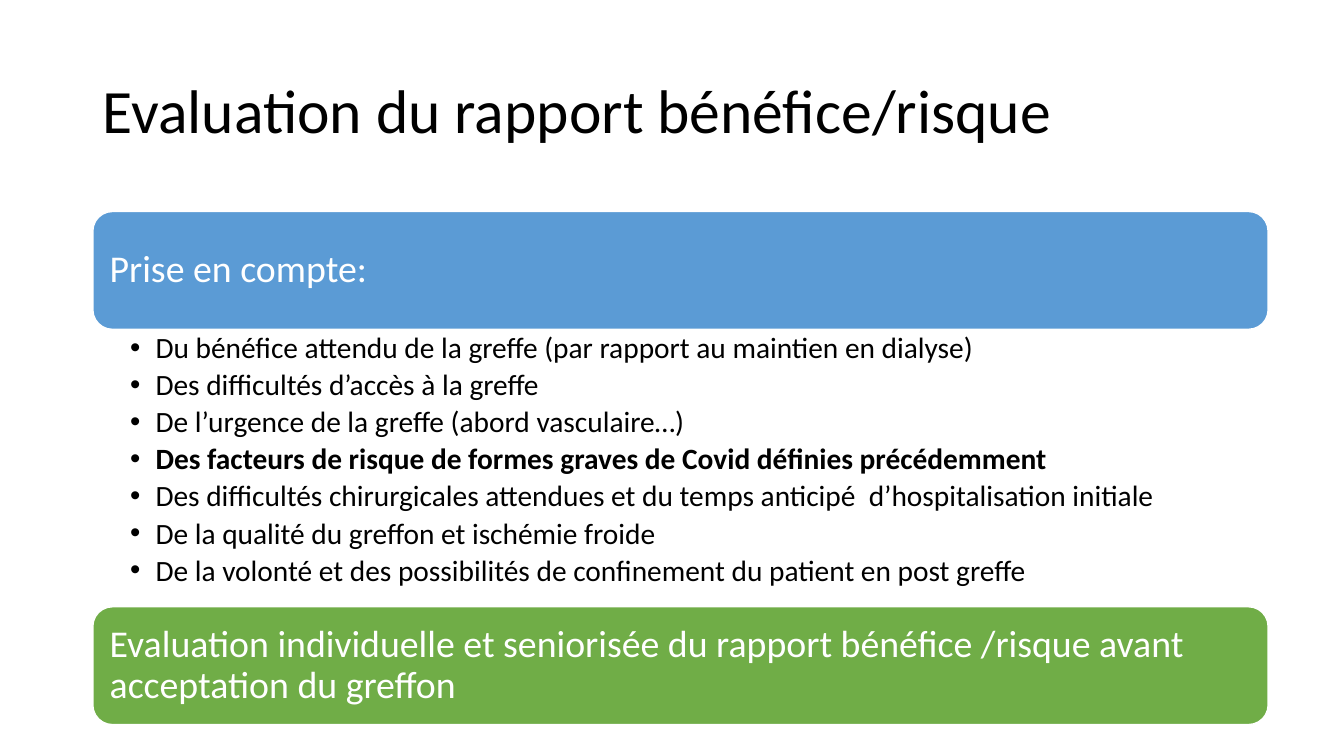
from dataclasses import dataclass

from lxml.etree import SubElement
from pptx import Presentation
from pptx.dml.color import RGBColor
from pptx.enum.shapes import MSO_SHAPE
from pptx.enum.text import MSO_ANCHOR, PP_ALIGN
from pptx.oxml.ns import qn
from pptx.util import Cm, Pt

COLORS = {"black": "000000", "white": "FFFFFF", "blue": "5B9BD5", "green": "70AD47"}
LEFT, WIDTH = 2.34, 29.62
BANNER_TOP, BANNER_H, LIST_H = 5.33, 2.97, 6.99
LIST_TOP = BANNER_TOP + BANNER_H


@dataclass
class Banner:
    top: float
    fill: str
    text: str


@dataclass
class Bullet:
    text: str
    bold: bool = False


BANNERS = [
    Banner(BANNER_TOP, "blue", "Prise en compte:"),
    Banner(LIST_TOP + LIST_H, "green",
           "Evaluation individuelle et seniorisée du rapport bénéfice /risque "
           "avant acceptation du greffon"),
]
BULLETS = [
    Bullet("Du bénéfice attendu de la greffe (par rapport au maintien en dialyse)"),
    Bullet("Des difficultés d’accès à la greffe"),
    Bullet("De l’urgence de la greffe (abord vasculaire…)"),
    Bullet("Des facteurs de risque de formes graves de Covid définies précédemment", True),
    Bullet("Des difficultés chirurgicales attendues et du temps anticipé  "
           "d’hospitalisation initiale"),
    Bullet("De la qualité du greffon et ischémie froide"),
    Bullet("De la volonté et des possibilités de confinement du patient en post greffe"),
]


def rgb(name: str) -> RGBColor:
    return RGBColor.from_string(COLORS[name])


def set_attrs(target, values: dict) -> None:
    for name, value in values.items():
        setattr(target, name, value)


def write(p, text: str, size: float, color: str, bold: bool = False) -> None:
    set_attrs(p, {"line_spacing": 0.9, "alignment": PP_ALIGN.LEFT})
    r = p.add_run()
    r.text = text
    set_attrs(r.font, {"name": "Calibri", "size": Pt(size), "bold": bold})
    r.font.color.rgb = rgb(color)


def add_title(s, text: str) -> None:
    sp = s.shapes.add_textbox(Cm(LEFT), Cm(1.02), Cm(29.21), Cm(3.68))
    tf = sp.text_frame
    set_attrs(tf, {"word_wrap": True, "vertical_anchor": MSO_ANCHOR.MIDDLE})
    write(tf.paragraphs[0], text, 44, "black")


def add_banner(s, banner: Banner) -> None:
    sp = s.shapes.add_shape(MSO_SHAPE.ROUNDED_RECTANGLE, Cm(LEFT), Cm(banner.top),
                            Cm(WIDTH), Cm(BANNER_H))
    sp.shadow.inherit = False
    sp.fill.solid()
    sp.fill.fore_color.rgb = rgb(banner.fill)
    sp.line.color.rgb = rgb("white")
    sp.line.width = Pt(1)
    tf = sp.text_frame
    set_attrs(tf, {"word_wrap": True, "vertical_anchor": MSO_ANCHOR.MIDDLE,
                   "margin_left": Cm(0.28), "margin_right": Cm(0.28)})
    write(tf.paragraphs[0], banner.text, 27, "white")


def add_bullets(s, bullets: list[Bullet]) -> None:
    sp = s.shapes.add_textbox(Cm(LEFT), Cm(LIST_TOP), Cm(WIDTH), Cm(LIST_H))
    tf = sp.text_frame
    set_attrs(tf, {"word_wrap": True, "margin_left": Cm(0.94), "margin_right": Cm(0.53),
                   "margin_top": Cm(0.1), "margin_bottom": Cm(0.1)})
    for i, bullet in enumerate(bullets):
        p = tf.add_paragraph() if i else tf.paragraphs[0]
        write(p, bullet.text, 21, "black", bullet.bold)
        set_attrs(p, {"space_after": Pt(3.8), "level": 1})
        # Bullet character with a hanging indent
        pPr = p._p.get_or_add_pPr()
        pPr.set("marL", str(Cm(0.64)))
        pPr.set("indent", str(-Cm(0.64)))
        SubElement(pPr, qn("a:buFont")).set("typeface", "Arial")
        SubElement(pPr, qn("a:buChar")).set("char", "•")


def main() -> None:
    prs = Presentation()
    set_attrs(prs, {"slide_width": Cm(33.87), "slide_height": Cm(19.05)})
    s = prs.slides.add_slide(prs.slide_layouts[6])

    # Title
    add_title(s, "Evaluation du rapport bénéfice/risque")

    # Criteria between the two banners
    for banner in BANNERS:
        add_banner(s, banner)
    add_bullets(s, BULLETS)

    prs.save("out.pptx")


if __name__ == "__main__":
    main()
